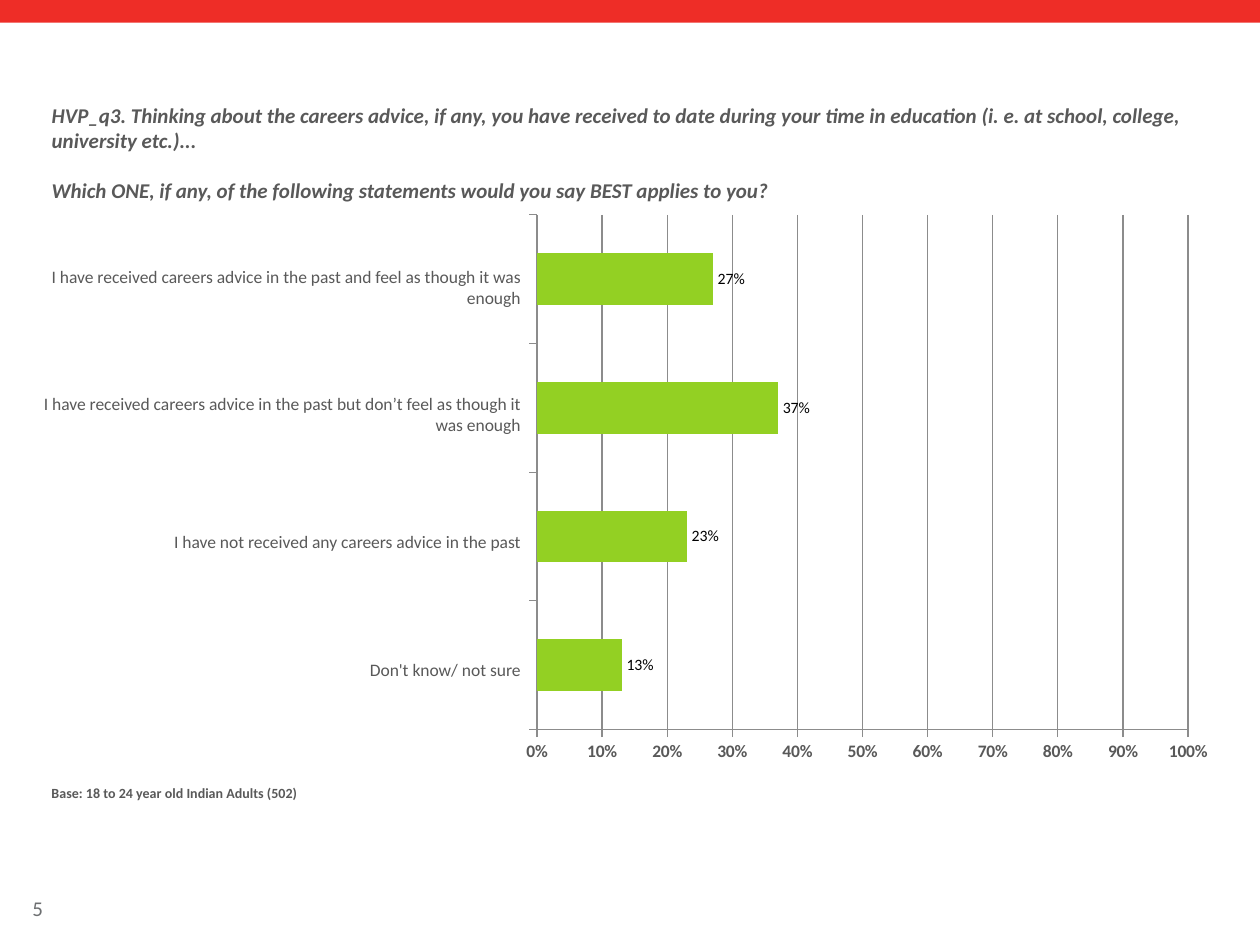
from lxml import etree
from pptx import Presentation
from pptx import util as u
from pptx.chart.data import CategoryChartData
from pptx.dml.color import RGBColor
from pptx.enum import chart as charts, shapes, text

Inches, Pt = u.Inches, u.Pt
COLORS = {"red": "EE2D27", "grey": "595959", "number": "6D6F71",
          "bar": "93D023", "line": "8C8C8C", "black": "000000"}
ANSWERS = [
    ("I have received careers advice in the past and feel as though it was enough", 0.27),
    ("I have received careers advice in the past but don’t feel as though it was enough", 0.37),
    ("I have not received any careers advice in the past", 0.23),
    ("Don't know/ not sure", 0.13),
]
QUESTION = [
    "HVP_q3. Thinking about the careers advice, if any, you have received to date "
    "during your time in education (i. e. at school, college, university etc.)...",
    "Which ONE, if any, of the following statements would you say BEST applies to you?",
]


def color(name):
    return RGBColor.from_string(COLORS[name])


def style_font(font, size, color_name="grey", bold=False, italic=False, name="Calibri"):
    font.name, font.size = name, Pt(size)
    font.bold, font.italic = bold, italic
    font.color.rgb = color(color_name)


def fill_text(shape, lines, size, align=text.PP_ALIGN.LEFT,
              anchor=text.MSO_ANCHOR.TOP, gap=0, **style):
    frame = shape.text_frame
    frame.word_wrap = True
    frame.auto_size = text.MSO_AUTO_SIZE.NONE
    frame.vertical_anchor = anchor
    for index, line in enumerate(lines):
        paragraph = frame.add_paragraph() if index else frame.paragraphs[0]
        paragraph.alignment = align
        if index:
            paragraph.space_before = Pt(gap)
        run = paragraph.add_run()
        run.text = line
        style_font(run.font, size, **style)


def add_text(slide, box, lines, size, **options):
    shape = slide.shapes.add_textbox(*map(Inches, box))
    fill_text(shape, lines, size, **options)


def add_top_band(slide, box):
    band = slide.shapes.add_shape(shapes.MSO_SHAPE.RECTANGLE, *map(Inches, box))
    band.shadow.inherit = False
    band.fill.solid()
    band.fill.fore_color.rgb = color("red")
    band.line.fill.background()


def place_question(slide, box):
    title = slide.shapes.title
    title.left, title.top, title.width, title.height = map(Inches, box)
    fill_text(title, QUESTION, 12, gap=14.4, bold=True, italic=True)


def add_answer_labels(slide, box):
    left, top, width, height = box
    row = height / len(ANSWERS)
    for index, (label, _) in enumerate(ANSWERS):
        add_text(slide, (left, top + index * row, width, row), [label], 10,
                 align=text.PP_ALIGN.RIGHT, anchor=text.MSO_ANCHOR.MIDDLE)


def set_plot_layout(chart, **fractions):
    plot_area = chart._chartSpace.chart.plotArea
    namespace = "{" + plot_area.nsmap["c"] + "}"
    for old in plot_area.findall(namespace + "layout"):
        plot_area.remove(old)
    layout = etree.Element(namespace + "layout")
    manual = etree.SubElement(layout, namespace + "manualLayout")
    settings = {"layoutTarget": "inner", "xMode": "edge", "yMode": "edge", **fractions}
    for tag, value in settings.items():
        etree.SubElement(manual, namespace + tag).set("val", str(value))
    plot_area.insert(0, layout)


def style_axis(axis):
    axis.major_tick_mark = charts.XL_TICK_MARK.OUTSIDE
    axis.minor_tick_mark = charts.XL_TICK_MARK.NONE
    axis.format.line.color.rgb = color("line")
    axis.format.line.width = Pt(0.75)


def add_answer_chart(slide, box):
    data = CategoryChartData(number_format="0%")
    data.categories = [str(number + 1) for number in range(len(ANSWERS))]
    data.add_series("Series 1", [value for _, value in reversed(ANSWERS)])
    chart = slide.shapes.add_chart(
        charts.XL_CHART_TYPE.BAR_CLUSTERED, *map(Inches, box), data).chart
    style_font(chart.font, 18, "number", name="Manrope")
    chart.has_legend = False
    chart.has_title = False
    set_plot_layout(chart, x=0.034, y=0.021, w=0.918, h=0.902)

    style_axis(chart.category_axis)
    chart.category_axis.has_major_gridlines = False
    chart.category_axis.tick_label_position = charts.XL_TICK_LABEL_POSITION.NONE

    value_axis = chart.value_axis
    style_axis(value_axis)
    value_axis.minimum_scale, value_axis.maximum_scale = 0, 1
    value_axis.major_unit = 0.1
    value_axis.has_major_gridlines = True
    value_axis.major_gridlines.format.line.color.rgb = color("line")
    value_axis.major_gridlines.format.line.width = Pt(0.75)
    value_axis.tick_label_position = charts.XL_TICK_LABEL_POSITION.LOW
    value_axis.tick_labels.number_format = "0%"
    value_axis.tick_labels.number_format_is_linked = False
    style_font(value_axis.tick_labels.font, 10, bold=True)

    plot = chart.plots[0]
    plot.gap_width, plot.overlap = 150, -10
    plot.vary_by_categories = False
    series = plot.series[0]
    series.format.fill.solid()
    series.format.fill.fore_color.rgb = color("bar")
    labels = series.data_labels
    labels.show_value = True
    labels.position = charts.XL_LABEL_POSITION.OUTSIDE_END
    labels.number_format = "0%"
    labels.number_format_is_linked = False
    style_font(labels.font, 9, "black")


def main():
    presentation = Presentation()
    presentation.slide_width, presentation.slide_height = Inches(10), Inches(7.5)
    slide = presentation.slides.add_slide(presentation.slide_layouts[5])
    add_top_band(slide, (0, 0, 10, 0.18))
    place_question(slide, (0.31, 0.76, 9.39, 0.85))
    add_answer_chart(slide, (4.07, 1.61, 5.63, 4.53))
    add_answer_labels(slide, (0.16, 1.77, 4.07, 4.05))
    add_text(slide, (0.31, 6.18, 9.39, 0.43),
             ["Base: 18 to 24 year old Indian Adults (502)"], 8, bold=True)
    add_text(slide, (0.16, 7.06, 0.77, 0.3), ["5"], 12,
             anchor=text.MSO_ANCHOR.MIDDLE, color_name="number")
    presentation.save("out.pptx")


if __name__ == "__main__":
    main()
